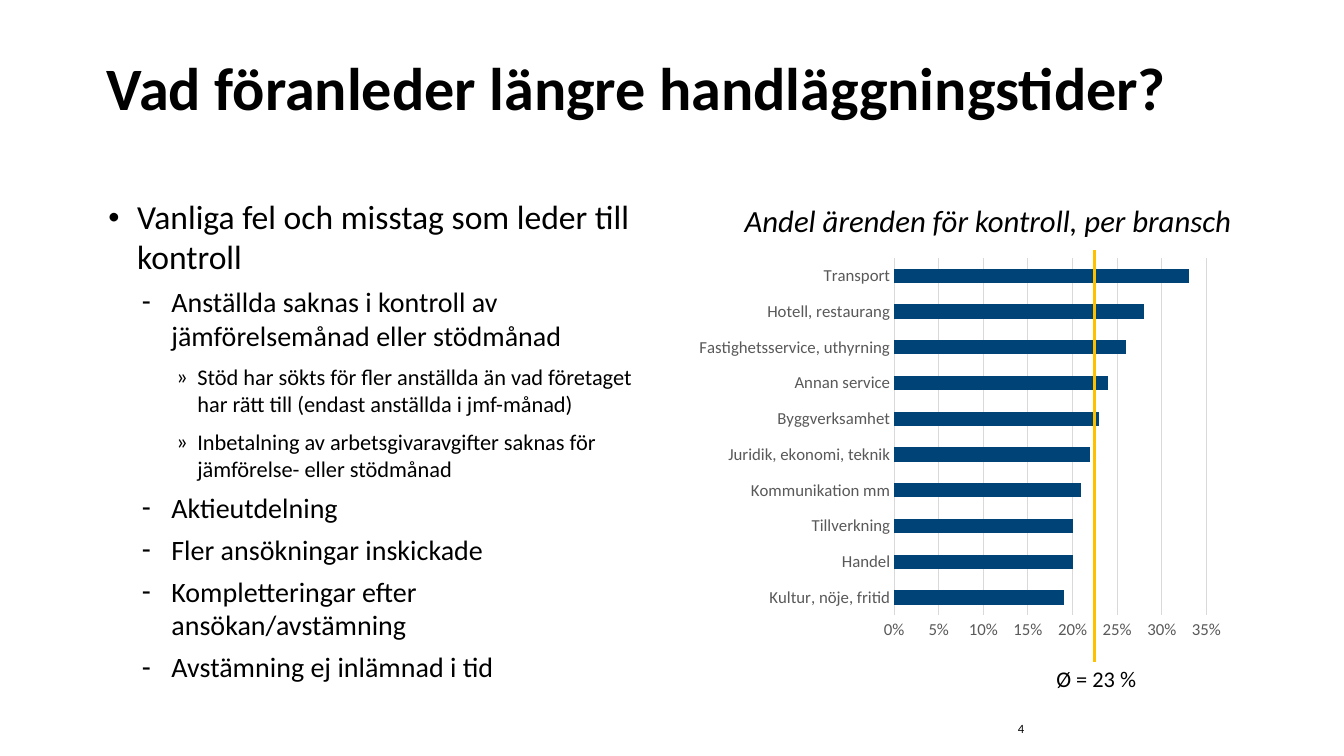
"""Build the slide on handling times, with a bullet list and a bar chart by industry."""
from dataclasses import dataclass
from typing import Any

import lxml.etree
import pptx
import pptx.chart.data
import pptx.dml.color
import pptx.enum.chart
import pptx.enum.shapes
import pptx.enum.text
import pptx.oxml.ns
import pptx.util

Pt = pptx.util.Pt
ALIGN = pptx.enum.text.PP_ALIGN
ANCHOR = pptx.enum.text.MSO_ANCHOR
TICK = pptx.enum.chart.XL_TICK_MARK
COLORS = {"text": "000000", "label": "595959", "grid": "D9D9D9", "bar": "004376", "mean": "FFC000"}
FONT = "Calibri"


@dataclass(frozen=True)
class Label:
    text: str
    box: tuple[float, float, float, float]
    font: dict[str, Any]
    para: dict[str, Any]
    frame: dict[str, Any]


@dataclass(frozen=True)
class Level:
    size: float
    left: float
    hang: float
    before: float
    bullet: str
    bullet_pct: int = 100


@dataclass(frozen=True)
class Bullet:
    level: int
    text: str


NO_INSETS = {f"margin_{side}": 0 for side in ("left", "top", "right", "bottom")}
LABELS = [
    Label("Vad föranleder längre handläggningstider?", (76.3, 6.5, 790.6, 82.1),
          {"size": Pt(43), "bold": True}, {"line_spacing": 0.9},
          {**NO_INSETS, "vertical_anchor": ANCHOR.BOTTOM}),
    Label("Andel ärenden för kontroll, per bransch", (491.8, 140.4, 427.7, 33.8),
          {"size": Pt(22), "italic": True}, {"alignment": ALIGN.CENTER}, {}),
    Label("Ø = 23 %", (727.2, 471.6, 111.6, 26.6),
          {"size": Pt(16)}, {"alignment": ALIGN.CENTER}, {}),
    Label("4", (700.6, 506.2, 31, 28.8), {"size": Pt(9)}, {"alignment": ALIGN.RIGHT},
          {**NO_INSETS, "vertical_anchor": ANCHOR.MIDDLE}),
]
LEVELS = [Level(24, 21, 21, 0, "•", 73), Level(20, 45.4, 21, 0, "‐"), Level(16, 64, 15, 2, "»")]
BULLETS = [
    Bullet(0, "Vanliga fel och misstag som leder till kontroll"),
    Bullet(1, "Anställda saknas i kontroll av jämförelsemånad eller stödmånad"),
    Bullet(2, "Stöd har sökts för fler anställda än vad företaget har rätt till (endast anställda i jmf-månad)"),
    Bullet(2, "Inbetalning av arbetsgivaravgifter saknas för jämförelse- eller stödmånad"),
    Bullet(1, "Aktieutdelning"),
    Bullet(1, "Fler ansökningar inskickade"),
    Bullet(1, "Kompletteringar efter ansökan/avstämning"),
    Bullet(1, "Avstämning ej inlämnad i tid"),
]
SHARES = {
    "Kultur, nöje, fritid": 0.19,
    "Handel": 0.20,
    "Tillverkning": 0.20,
    "Kommunikation mm": 0.21,
    "Juridik, ekonomi, teknik": 0.22,
    "Byggverksamhet": 0.23,
    "Annan service": 0.24,
    "Fastighetsservice, uthyrning": 0.26,
    "Hotell, restaurang": 0.28,
    "Transport": 0.33,
}


def rgb(name: str) -> pptx.dml.color.RGBColor:
    return pptx.dml.color.RGBColor.from_string(COLORS[name])


def apply(target: Any, values: dict[str, Any]) -> None:
    for name, value in values.items():
        setattr(target, name, value)


def style_font(font: Any, values: dict[str, Any], color: str = "text") -> None:
    apply(font, {"name": FONT, **values})
    font.color.rgb = rgb(color)


def style_line(line: Any, color: str, width: float) -> None:
    line.color.rgb = rgb(color)
    line.width = Pt(width)


def add_frame(s: Any, box: tuple[float, ...], values: dict[str, Any]) -> Any:
    tf = s.shapes.add_textbox(*map(Pt, box)).text_frame
    apply(tf, {"word_wrap": True, **values})
    return tf


def add_label(s: Any, label: Label) -> None:
    p = add_frame(s, label.box, label.frame).paragraphs[0]
    apply(p, label.para)
    r = p.add_run()
    r.text = label.text
    style_font(r.font, label.font)


def add_bullets(s: Any, bullets: list[Bullet]) -> None:
    tf = add_frame(s, (77, 139.7, 388.1, 322.6), NO_INSETS)
    for i, bullet in enumerate(bullets):
        level = LEVELS[bullet.level]
        p = tf.add_paragraph() if i else tf.paragraphs[0]
        apply(p, {"level": bullet.level, "space_before": Pt(level.before), "space_after": Pt(6)})
        pPr = p._p.get_or_add_pPr()
        pPr.set("marL", str(Pt(level.left)))
        pPr.set("indent", str(-Pt(level.hang)))
        for tag, attr, value in (("a:buSzPct", "val", str(level.bullet_pct * 1000)),
                                 ("a:buFont", "typeface", FONT),
                                 ("a:buChar", "char", level.bullet)):
            lxml.etree.SubElement(pPr, pptx.oxml.ns.qn(tag)).set(attr, value)
        r = p.add_run()
        r.text = bullet.text
        style_font(r.font, {"size": Pt(level.size)})


def add_share_chart(s: Any, shares: dict[str, float]) -> None:
    data = pptx.chart.data.CategoryChartData(number_format="0%")
    data.categories = list(shares)
    data.add_series("Series 1", list(shares.values()))
    kind = pptx.enum.chart.XL_CHART_TYPE.BAR_STACKED
    chart = s.shapes.add_chart(kind, *map(Pt, (491.8, 178.6, 388.1, 283.7)), data).chart
    apply(chart, {"has_title": False, "has_legend": False})
    style_font(chart.font, {"size": Pt(10)})
    plot = chart.plots[0]
    apply(plot, {"gap_width": 150, "overlap": 100, "vary_by_categories": False})
    fill = plot.series[0].format.fill
    fill.solid()
    fill.fore_color.rgb = rgb("bar")
    cats, vals = chart.category_axis, chart.value_axis
    for axis in (cats, vals):
        apply(axis, {"major_tick_mark": TICK.NONE, "minor_tick_mark": TICK.NONE})
        style_font(axis.tick_labels.font, {"size": Pt(12)}, "label")
    style_line(cats.format.line, "grid", 0.75)
    apply(vals, {"minimum_scale": 0, "maximum_scale": 0.35, "major_unit": 0.05,
                 "has_major_gridlines": True})
    apply(vals.tick_labels, {"number_format": "0%", "number_format_is_linked": False})
    vals.format.line.fill.background()
    style_line(vals.major_gridlines.format.line, "grid", 0.75)


def add_mean_line(s: Any) -> None:
    kind = pptx.enum.shapes.MSO_CONNECTOR.STRAIGHT
    sp = s.shapes.add_connector(kind, *map(Pt, (781.9, 178.6, 781.9, 473)))
    style_line(sp.line, "mean", 2.25)
    lxml.etree.SubElement(sp._element.spPr, pptx.oxml.ns.qn("a:effectLst"))


def main() -> None:
    prs = pptx.Presentation()
    apply(prs, {"slide_width": Pt(960), "slide_height": Pt(540)})
    s = prs.slides.add_slide(prs.slide_layouts[6])
    add_bullets(s, BULLETS)
    add_share_chart(s, SHARES)
    add_mean_line(s)
    for label in LABELS:
        add_label(s, label)
    prs.save("out.pptx")


if __name__ == "__main__":
    main()
